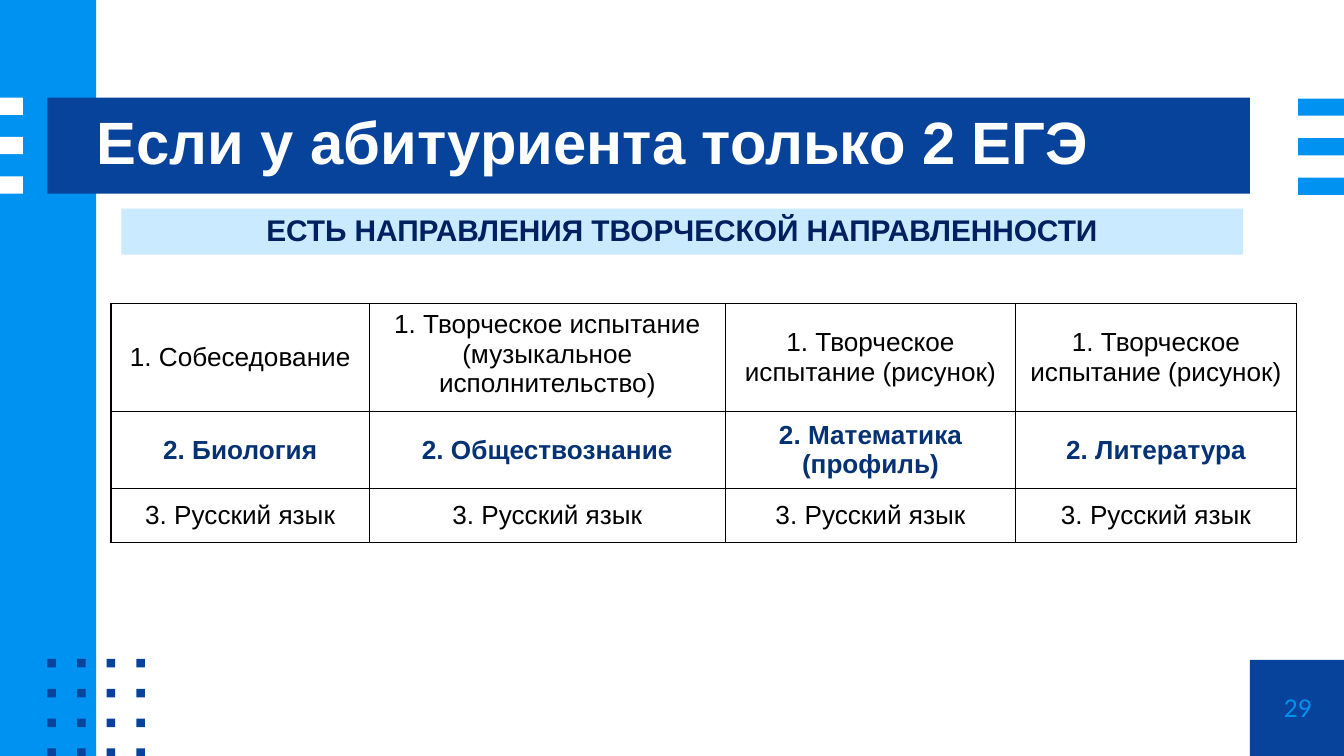
from lxml import etree
from pptx import Presentation
from pptx.dml.color import RGBColor
from pptx.enum import shapes, text
from pptx.oxml.ns import qn
from pptx.util import Pt

NAVY, BLUE, PALE = "07439B", "0092F0", "C9EAFF"
WHITE, BLACK = "FFFFFF", "000000"
MIDDLE, TOP = text.MSO_ANCHOR.MIDDLE, text.MSO_ANCHOR.TOP
CENTER, LEFT = text.PP_ALIGN.CENTER, text.PP_ALIGN.LEFT

EXAMS = [
    ["1. Собеседование", "1. Творческое испытание (музыкальное исполнительство)",
     "1. Творческое испытание (рисунок)", "1. Творческое испытание (рисунок)"],
    ["2. Биология", "2. Обществознание", "2. Математика (профиль)", "2. Литература"],
    ["3. Русский язык"] * 4,
]


def color(value):
    return RGBColor.from_string(value)


def add_rect(s, x, y, w, h, fill):
    sp = s.shapes.add_shape(shapes.MSO_SHAPE.RECTANGLE, Pt(x), Pt(y), Pt(w), Pt(h))
    sp.shadow.inherit = False
    sp.fill.solid()
    sp.fill.fore_color.rgb = color(fill)
    sp.line.fill.background()
    return sp


def write(tf, words, size, ink, bold=False, font="Arial", align=CENTER, spacing=None):
    p = tf.paragraphs[0]
    p.alignment = align
    if spacing:
        p.line_spacing = spacing
    r = p.add_run()
    r.text = words
    r.font.name, r.font.size, r.font.bold = font, Pt(size), bold
    r.font.color.rgb = color(ink)


def add_label(s, x, y, w, h, words, size, ink, **style):
    tf = s.shapes.add_textbox(Pt(x), Pt(y), Pt(w), Pt(h)).text_frame
    tf.word_wrap = True
    tf.vertical_anchor = MIDDLE
    tf.margin_left = tf.margin_right = tf.margin_top = tf.margin_bottom = 0
    write(tf, words, size, ink, **style)


def add_borders(cell, ink, width):
    # Borders must come before the fill in the cell properties
    props = cell._tc.get_or_add_tcPr()
    for i, side in enumerate(("a:lnL", "a:lnR", "a:lnT", "a:lnB")):
        ln = etree.Element(qn(side), w=str(Pt(width)))
        fill = etree.SubElement(ln, qn("a:solidFill"))
        etree.SubElement(fill, qn("a:srgbClr"), val=ink)
        props.insert(i, ln)


def add_exam_table(s, x, y, widths, heights):
    frame = s.shapes.add_table(len(heights), len(widths), Pt(x), Pt(y),
                               Pt(sum(widths)), Pt(sum(heights)))
    table = frame.table
    table.first_row = table.horz_banding = False
    for column, width in zip(table.columns, widths):
        column.width = Pt(width)
    for i, (row, height) in enumerate(zip(table.rows, heights)):
        row.height = Pt(height)
        for j, cell in enumerate(row.cells):
            chosen = i == 1
            cell.fill.background()
            cell.vertical_anchor = TOP if (i, j) == (0, 1) else MIDDLE
            write(cell.text_frame, EXAMS[i][j], 14,
                  "053274" if chosen else BLACK, bold=chosen)
            add_borders(cell, BLACK, 0.75)


def add_decor(s):
    # Page corner, side band and title bar
    add_rect(s, 669.6, 353.5, 51.5, 51.5, NAVY)
    add_rect(s, 0, 0, 51.6, 405, BLUE)
    add_rect(s, 25.4, 52.3, 644.2, 51.5, NAVY)
    # Stripes at both ends of the title bar
    for i in range(3):
        add_rect(s, 0, 52.3 + 21.1 * i, 12.3, 9.2, WHITE)
        add_rect(s, 695.4, 52.8 + 21.2 * i, 24.6, 9.2, BLUE)
    # Dot grid
    for row in range(4):
        for col in range(4):
            add_rect(s, 25.4 + 15.9 * col, 353 + 16 * row, 4.6, 4.6, NAVY)


def main():
    prs = Presentation()
    prs.slide_width, prs.slide_height = Pt(720), Pt(405)
    s = prs.slides.add_slide(prs.slide_layouts[6])
    add_decor(s)

    # Page number and title
    add_label(s, 669.6, 353.5, 51.5, 51.5, "29", 13, BLUE, font="Lato")
    add_label(s, 51.6, 44, 618, 67.7, "Если у абитуриента только 2 ЕГЭ", 32, WHITE,
              bold=True, align=LEFT, spacing=0.9)

    # Subtitle strip
    strip = add_rect(s, 65, 111.8, 601, 24.6, PALE)
    strip.text_frame.word_wrap = True
    strip.text_frame.vertical_anchor = TOP
    write(strip.text_frame, "ЕСТЬ НАПРАВЛЕНИЯ ТВОРЧЕСКОЙ НАПРАВЛЕННОСТИ", 16, "002060",
          bold=True, spacing=0.9)

    # Exam combinations
    add_exam_table(s, 59.5, 162.6, [138.4, 190.7, 155.6, 150.3], [57.8, 41.3, 29])
    prs.save("out.pptx")


if __name__ == "__main__":
    main()
